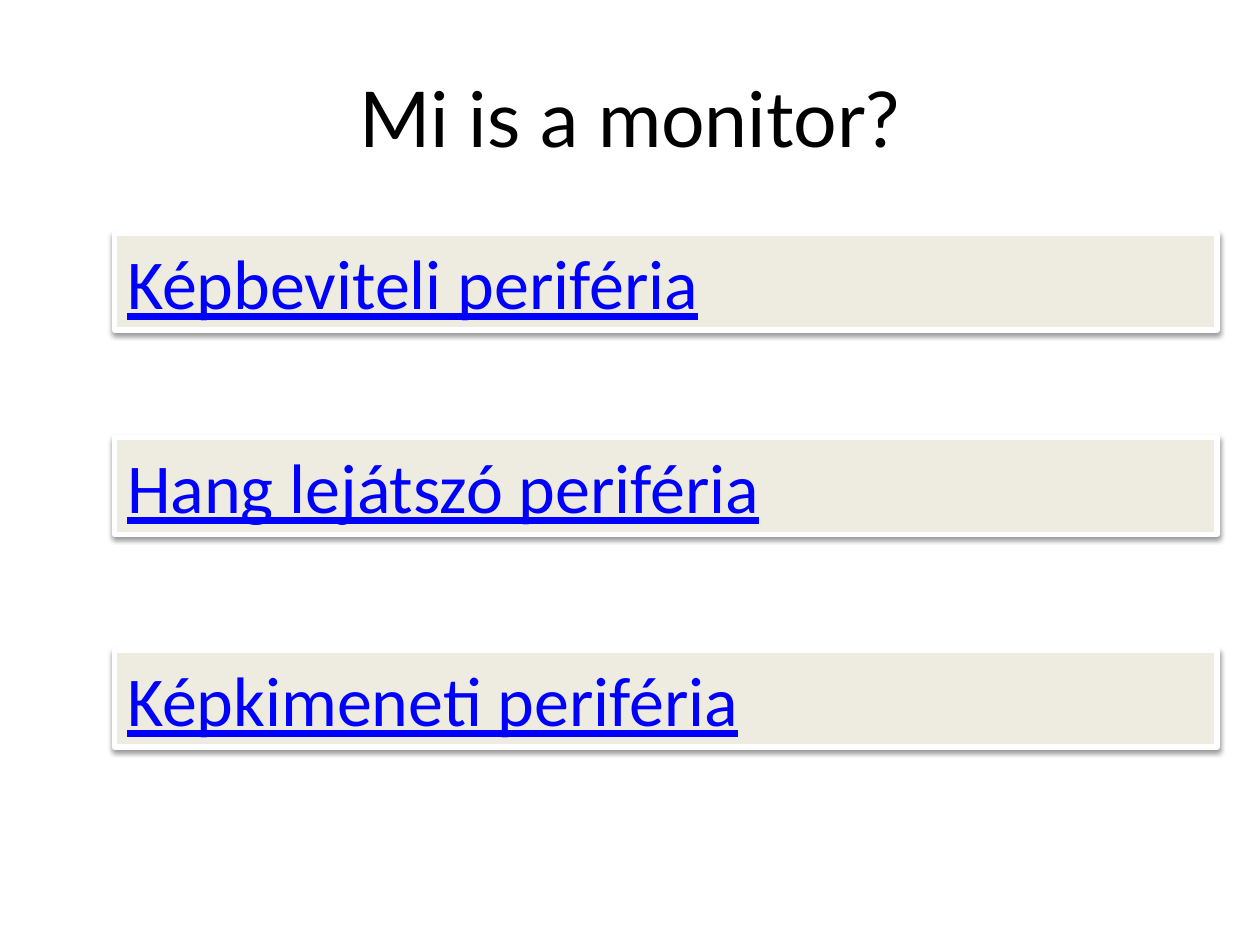
from lxml import etree
from pptx import Presentation
from pptx.dml.color import RGBColor
from pptx.enum.shapes import MSO_SHAPE
from pptx.enum.text import MSO_ANCHOR, MSO_AUTO_SIZE, PP_ALIGN
from pptx.oxml.ns import qn
from pptx.util import Inches, Pt

RECTANGLE = MSO_SHAPE.RECTANGLE
TOP, MIDDLE = MSO_ANCHOR.TOP, MSO_ANCHOR.MIDDLE
LEFT, CENTER = PP_ALIGN.LEFT, PP_ALIGN.CENTER
FIT_SHAPE = MSO_AUTO_SIZE.SHAPE_TO_FIT_TEXT
TITLE_ONLY = 5

TITLE = "Mi is a monitor?"
ANSWERS = [
    ("Képbeviteli periféria", 1.85),
    ("Hang lejátszó periféria", 3.47),
    ("Képkimeneti periféria", 5.16),
]
ANSWER_LEFT, ANSWER_WIDTH, ANSWER_HEIGHT = 0.91, 8.75, 0.77


def color(value):
    return RGBColor.from_string(value)


def write(shape, text, *, size, font, fill, align, anchor, underline=None):
    frame = shape.text_frame
    frame.word_wrap = True
    frame.vertical_anchor = anchor
    paragraph = frame.paragraphs[0]
    paragraph.alignment = align
    run = paragraph.add_run()
    run.text = text
    run.font.size = Pt(size)
    run.font.name = font
    run.font.color.rgb = color(fill)
    run.font.underline = underline


def add_shadow(shape, value, *, opacity, blur, distance, angle):
    shape.shadow.inherit = False
    effects = shape._element.spPr.find(qn("a:effectLst"))
    shadow = etree.SubElement(
        effects, qn("a:outerShdw"), blurRad=str(Pt(blur)), dist=str(Pt(distance)),
        dir=str(angle * 60000), rotWithShape="0")
    shade = etree.SubElement(shadow, qn("a:srgbClr"), val=value)
    etree.SubElement(shade, qn("a:alpha"), val=str(opacity * 1000))


def add_answer(slide, text, top):
    shape = slide.shapes.add_shape(
        RECTANGLE, Inches(ANSWER_LEFT), Inches(top),
        Inches(ANSWER_WIDTH), Inches(ANSWER_HEIGHT))
    shape.fill.solid()
    shape.fill.fore_color.rgb = color("EEECE1")
    shape.line.color.rgb = color("FFFFFF")
    shape.line.width = Pt(3)
    add_shadow(shape, "000000", opacity=38, blur=3.1, distance=1.6, angle=90)
    write(shape, text, size=40, font="Calibri", fill="0000FF",
          align=LEFT, anchor=TOP, underline=True)
    shape.text_frame.auto_size = FIT_SHAPE


def main():
    presentation = Presentation()
    presentation.slide_width = Inches(10)
    presentation.slide_height = Inches(7.5)
    slide = presentation.slides.add_slide(presentation.slide_layouts[TITLE_ONLY])
    title = slide.shapes.title
    title.left, title.top = Inches(0.5), Inches(0.3)
    title.width, title.height = Inches(9), Inches(1.25)
    write(title, TITLE, size=44, font="Lato", fill="000000",
          align=CENTER, anchor=MIDDLE)
    for text, top in ANSWERS:
        add_answer(slide, text, top)
    presentation.save("out.pptx")


if __name__ == "__main__":
    main()
